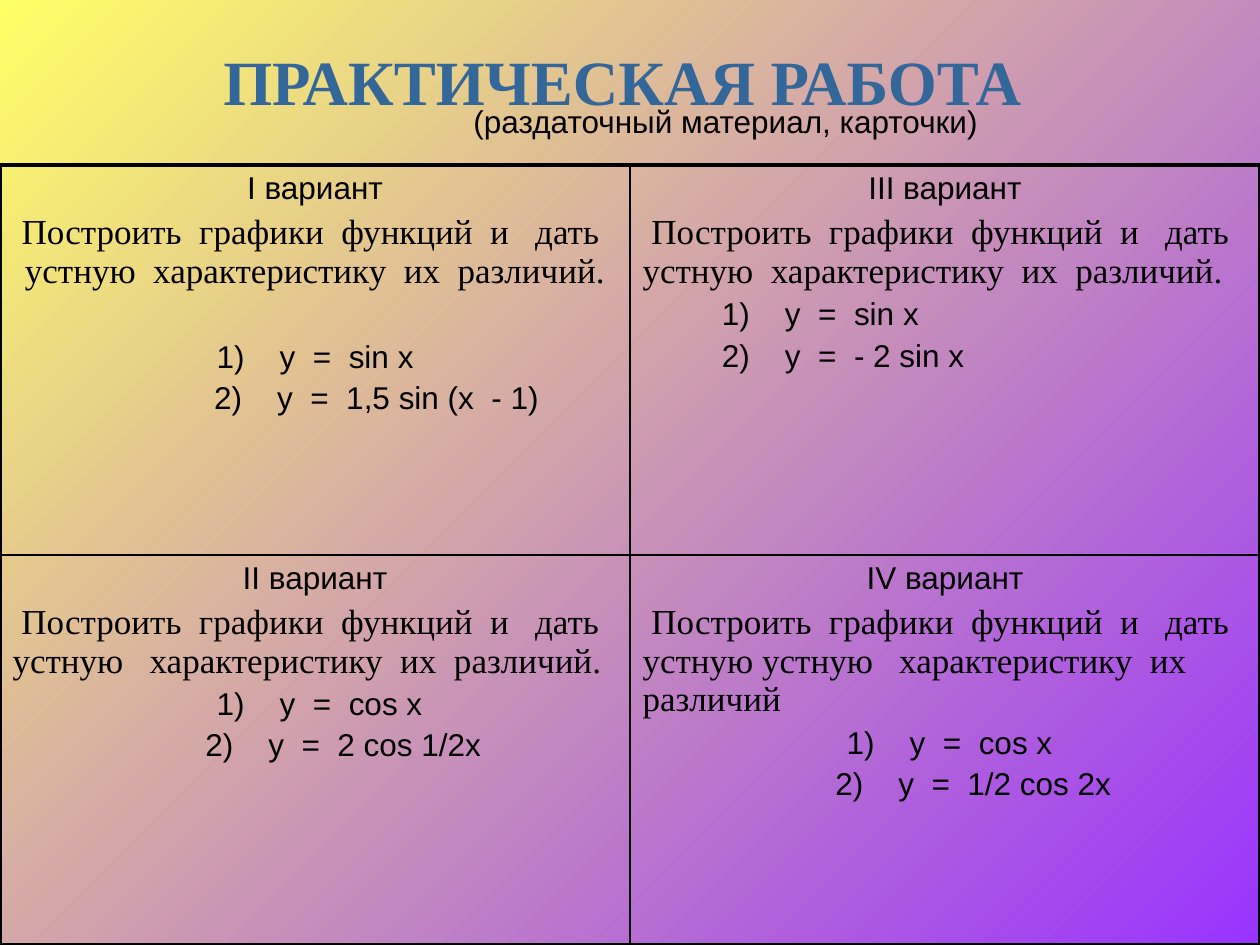
from dataclasses import dataclass

from lxml.etree import SubElement
from pptx import Presentation
from pptx.dml.color import RGBColor as Color
from pptx.enum.text import PP_ALIGN as Align
from pptx.oxml.ns import qn
from pptx.util import Inches, Pt


@dataclass(frozen=True)
class Theme:
    start: Color = Color.from_string("FFFF66")
    end: Color = Color.from_string("9933FF")
    title: Color = Color.from_string("336699")
    ink: Color = Color.from_string("000000")
    serif: str = "Times New Roman"
    sans: str = "Arial"
    title_size: int = 36
    task_size: int = 20
    text_size: int = 18
    outer_line: float = 2.25
    inner_line: float = 1
    gap: float = 3.6
    wide_gap: float = 28


theme = Theme()


def style(para, face, size, color=theme.ink, align=Align.LEFT, before=0):
    para.font.name = face
    para.font.size = Pt(size)
    para.font.color.rgb = color
    para.alignment = align
    para.space_before = Pt(before)


def add_border(cell, side, width):
    line = SubElement(cell._tc.get_or_add_tcPr(), qn(f"a:ln{side}"), w=str(Pt(width)))
    fill = SubElement(line, qn("a:solidFill"))
    SubElement(fill, qn("a:srgbClr"), val=str(theme.ink))


deck = Presentation()
deck.slide_width, deck.slide_height = Inches(10), Inches(7.5)
across, down = deck.slide_width / 100, deck.slide_height / 100
page = deck.slides.add_slide(deck.slide_layouts[6])

backdrop = page.background.fill
backdrop.gradient()
backdrop.gradient_angle = 315
for stop, color in zip(backdrop.gradient_stops, (theme.start, theme.end)):
    stop.color.rgb = color

headings = [
    ("ПРАКТИЧЕСКАЯ РАБОТА", (14.4, 3.8, 70, 9), theme.serif, theme.title_size, theme.title, Align.CENTER, True),
    ("(раздаточный материал, карточки)", (36.6, 10.13, 42.4, 5.33), theme.sans, theme.text_size, theme.ink, Align.LEFT, False),
]
for text, (left, top, width, height), face, size, color, align, bold in headings:
    box = page.shapes.add_textbox(
        int(left * across), int(top * down), int(width * across), int(height * down)
    )
    box.text_frame.word_wrap = False
    para = box.text_frame.paragraphs[0]
    para.text = text
    style(para, face, size, color, align)
    para.font.bold = bold

cards = [
    [
        ("I вариант",
         "Построить  графики  функций  и   дать  устную  характеристику  их  различий.",
         Align.CENTER, theme.wide_gap, [("у  =  sin x", 16.2), ("у  =  1,5 sin (x  - 1)", 16)]),
        ("III вариант",
         "Построить  графики  функций  и   дать устную  характеристику  их  различий.",
         Align.LEFT, theme.gap, [("у  =  sin x", 6.3), ("y  =  - 2 sin x", 6.3)]),
    ],
    [
        ("II вариант",
         "Построить  графики  функций  и   дать  устную   характеристику  их  различий.",
         Align.LEFT, theme.gap, [("у  =  cos x", 16.2), ("y  =  2 cos 1/2x", 15.3)]),
        ("IV вариант",
         "Построить  графики  функций  и   дать устную устную   характеристику  их  различий",
         Align.LEFT, theme.gap, [("у  =  сos x", 16.2), ("y  =  1/2 cos 2x", 15.3)]),
    ],
]

table_top = int(17.47 * down)
table = page.shapes.add_table(
    2, 2, 0, table_top, deck.slide_width, deck.slide_height - table_top
).table
table.first_row = False
table.horz_banding = False

number_gap = int(5 * across)
task_indent = int(0.7 * across)
for row, card_row in enumerate(cards):
    for column, (name, task, align, gap, formulas) in enumerate(card_row):
        cell = table.cell(row, column)
        outer_sides = "LR"[column] + "TB"[row]
        for side in "LRTB":
            add_border(cell, side, theme.outer_line if side in outer_sides else theme.inner_line)
        cell.fill.background()

        frame = cell.text_frame
        para = frame.paragraphs[0]
        para.text = name
        style(para, theme.sans, theme.text_size, align=Align.CENTER)

        para = frame.add_paragraph()
        para.text = task
        style(para, theme.serif, theme.task_size, align=align, before=theme.gap)
        if align == Align.LEFT:
            para._p.get_or_add_pPr().set("indent", str(task_indent))

        for number, (formula, start) in enumerate(formulas, 1):
            para = frame.add_paragraph()
            para.text = f"{number})\t{formula}"
            style(para, theme.sans, theme.text_size, before=gap if number == 1 else theme.gap)
            layout = para._p.get_or_add_pPr()
            layout.set("marL", str(int(start * across) + number_gap))
            layout.set("indent", str(-number_gap))

deck.save("out.pptx")
